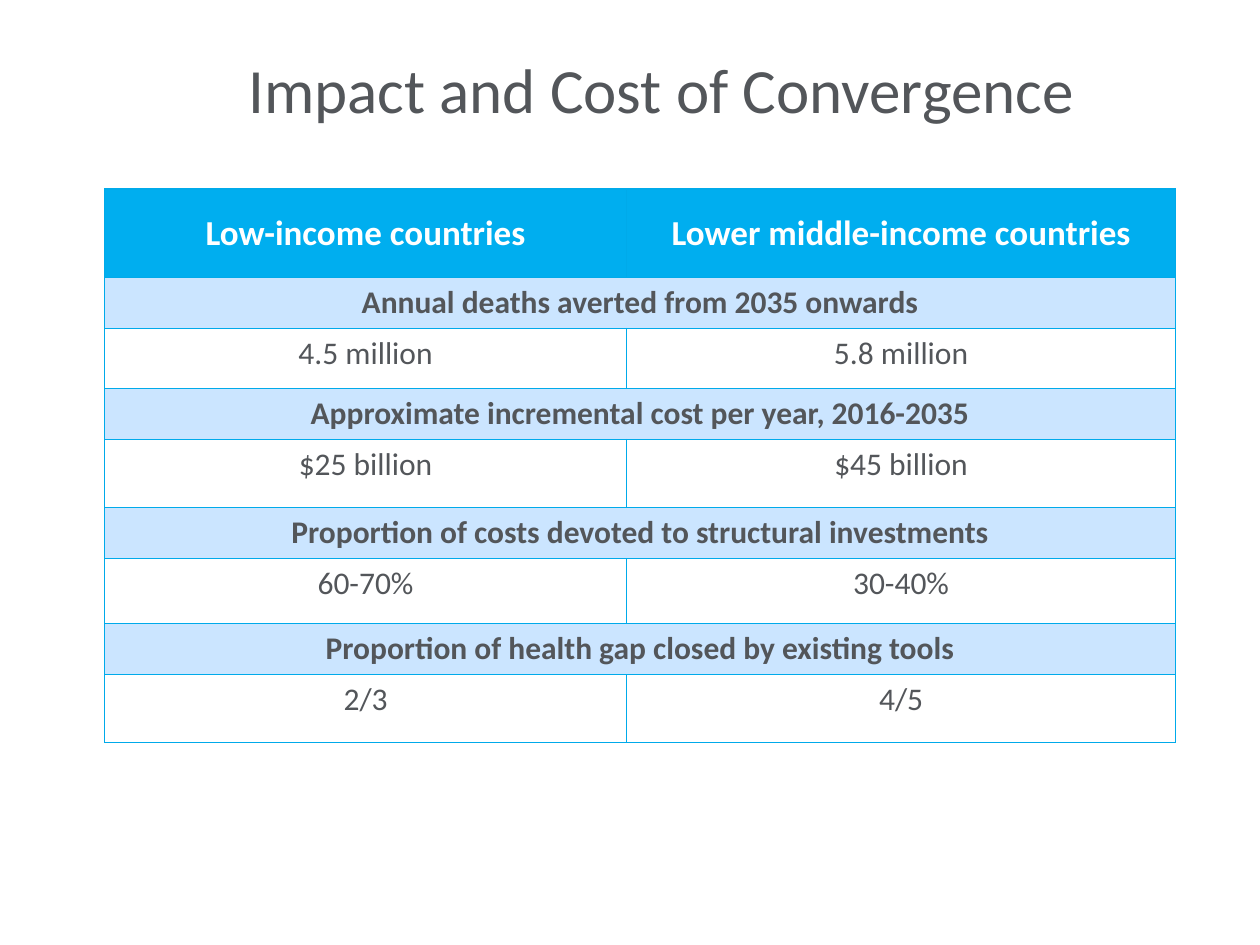
"""Build a slide with a table on the impact and cost of convergence."""
from lxml import etree
from pptx import Presentation
from pptx.dml.color import RGBColor
from pptx.enum.text import MSO_ANCHOR, PP_ALIGN
from pptx.oxml.ns import qn
from pptx.util import Cm, Pt

MIDDLE, TOP = MSO_ANCHOR.MIDDLE, MSO_ANCHOR.TOP
CENTER = PP_ALIGN.CENTER
FONT = "Calibri"
COLORS = {"text": "53565A", "header": "00AEEF", "band": "CBE5FF",
          "white": "FFFFFF", "border": "00AAEA"}

TITLE = "Impact and Cost of Convergence"
HEADERS = ("Low-income countries", "Lower middle-income countries")
SECTIONS = [
    ("Annual deaths averted from 2035 onwards", ("4.5 million", "5.8 million"), 1.21),
    ("Approximate incremental cost per year, 2016-2035", ("$25 billion", "$45 billion"), 1.37),
    ("Proportion of costs devoted to structural investments", ("60-70%", "30-40%"), 1.31),
    ("Proportion of health gap closed by existing tools", ("2/3", "4/5"), 1.37),
]
COL_WIDTHS = (10.52, 11.07)
HEADER_HEIGHT, BAND_HEIGHT = 1.78, 1.03


def write(tf, text, size, color, bold=False):
    p = tf.paragraphs[0]
    p.text = text
    p.alignment = CENTER
    p.font.name, p.font.size, p.font.bold = FONT, Pt(size), bold
    p.font.color.rgb = RGBColor.from_string(COLORS[color])


def style_cell(cell, fill):
    tc_pr = cell._tc.get_or_add_tcPr()
    for side in ("lnL", "lnR", "lnT", "lnB"):
        ln = etree.SubElement(tc_pr, qn(f"a:{side}"), w=str(Pt(0.75)))
        solid = etree.SubElement(ln, qn("a:solidFill"))
        etree.SubElement(solid, qn("a:srgbClr"), val=COLORS["border"])
    cell.fill.solid()
    cell.fill.fore_color.rgb = RGBColor.from_string(COLORS[fill])


def add_title(s):
    tf = s.shapes.add_textbox(Cm(1.9), Cm(0.2), Cm(22.86), Cm(3.18)).text_frame
    tf.word_wrap = True
    tf.vertical_anchor = MIDDLE
    write(tf, TITLE, 36, "text")


def add_impact_table(s):
    rows = [(HEADERS, HEADER_HEIGHT, "header", 20, "white", True)]
    for heading, values, height in SECTIONS:
        rows.append(((heading,), BAND_HEIGHT, "band", 18, "text", True))
        rows.append((values, height, "white", 18, "text", False))

    table = s.shapes.add_table(
        len(rows), len(COL_WIDTHS), Cm(2.11), Cm(3.81),
        Cm(sum(COL_WIDTHS)), Cm(sum(row[1] for row in rows))).table
    for column, width in zip(table.columns, COL_WIDTHS):
        column.width = Cm(width)
    for i, (texts, height, fill, size, color, bold) in enumerate(rows):
        table.rows[i].height = Cm(height)
        cells = list(table.rows[i].cells)
        for cell in cells:
            style_cell(cell, fill)
            cell.vertical_anchor = MIDDLE if i == 0 else TOP
        if len(texts) == 1:
            cells[0].merge(cells[-1])
        for cell, text in zip(cells, texts):
            write(cell.text_frame, text, size, color, bold)


def main():
    prs = Presentation()
    prs.slide_width, prs.slide_height = Cm(25.4), Cm(19.05)
    s = prs.slides.add_slide(prs.slide_layouts[6])
    add_title(s)
    add_impact_table(s)
    prs.save("out.pptx")


if __name__ == "__main__":
    main()
